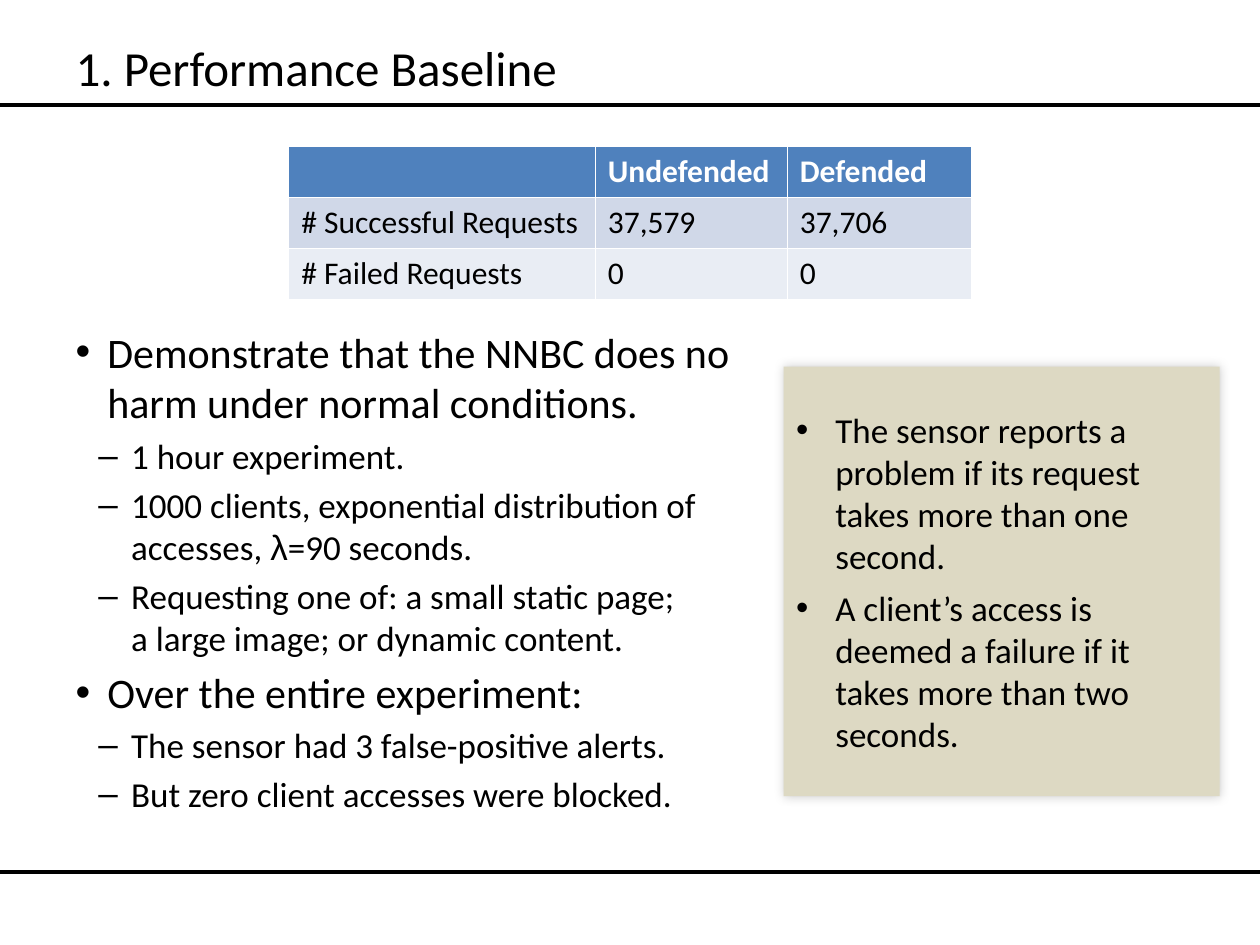
import pptx
import pptx.util
import pptx.dml.color
import pptx.enum.shapes
import pptx.enum.text
import pptx.oxml.ns
from lxml import etree

Cm, Pt = pptx.util.Cm, pptx.util.Pt
qn = pptx.oxml.ns.qn
hues = {"black": "000000", "white": "FFFFFF", "head": "4F81BD",
        "odd": "D0D8E8", "even": "E9EDF4", "note": "DDD9C3"}
rgb = {k: pptx.dml.color.RGBColor.from_string(v) for k, v in hues.items()}


def style(para, size, hue="black", bold=False):
    para.font.name = "Calibri"
    para.font.size = Pt(size)
    para.font.bold = bold
    para.font.color.rgb = rgb[hue]


def bullet(para, mark, left, hang):
    props = para._p.get_or_add_pPr()
    props.set("marL", str(Cm(left)))
    props.set("indent", str(-Cm(hang)))
    etree.SubElement(props, qn("a:buFont")).set("typeface", "Arial")
    etree.SubElement(props, qn("a:buChar")).set("char", mark)


deck = pptx.Presentation()
deck.slide_width, deck.slide_height = Cm(25.4), Cm(19.05)
slide = deck.slides.add_slide(deck.slide_layouts[1])
shapes = slide.shapes

# Rules across the slide
for y in (2.11, 17.58):
    rule = shapes.add_connector(
        pptx.enum.shapes.MSO_CONNECTOR.STRAIGHT, 0, Cm(y), Cm(25.4), Cm(y))
    rule.line.color.rgb = rgb["black"]
    rule.line.width = Pt(2.25)
    etree.SubElement(rule._element.spPr, qn("a:effectLst"))

# Title
title = shapes.title
title.left, title.top, title.width, title.height = (
    Cm(1.27), Cm(0.56), Cm(15.65), Cm(1.57))
frame = title.text_frame
frame.text = "1. Performance Baseline"
frame.auto_size = pptx.enum.text.MSO_AUTO_SIZE.NONE
frame.vertical_anchor = pptx.enum.text.MSO_ANCHOR.MIDDLE
frame.paragraphs[0].alignment = pptx.enum.text.PP_ALIGN.LEFT
style(frame.paragraphs[0], 28)

# Main list: level and text
points = [
    (0, "Demonstrate that the NNBC does no\nharm under normal conditions."),
    (1, "1 hour experiment."),
    (1, "1000 clients, exponential distribution of\naccesses, λ=90 seconds."),
    (1, "Requesting one of: a small static page;\na large image; or dynamic content."),
    (0, "Over the entire experiment:"),
    (1, "The sensor had 3 false-positive alerts."),
    (1, "But zero client accesses were blocked."),
]
looks = [("•", 0.64, 0.64, 24), ("–", 1.12, 0.66, 20)]
body = slide.placeholders[1]
body.left, body.top, body.width, body.height = (
    Cm(1.27), Cm(6.45), Cm(22.86), Cm(10.57))
frame = body.text_frame
frame.auto_size = pptx.enum.text.MSO_AUTO_SIZE.NONE
for i, (level, text) in enumerate(points):
    para = frame.add_paragraph() if i else frame.paragraphs[0]
    mark, left, hang, size = looks[level]
    para.level = level
    start, greek, rest = text.partition("λ")
    para.text = start
    if greek:
        run = para.add_run()
        run.text = greek
        run.font.name = "Arial"
        para.add_run().text = rest
    para.space_before = Pt(size * 0.2 if i else 0)
    bullet(para, mark, left, hang)
    style(para, size)

# Results table
rows = [("", "Undefended", "Defended"),
        ("# Successful Requests", "37,579", "37,706"),
        ("# Failed Requests", "0", "0")]
fills = ["head", "odd", "even"]
table = shapes.add_table(3, 3, Cm(5.82), Cm(2.95), Cm(13.76), Cm(3.09)).table
for col, wide in zip(table.columns, (6.18, 3.87, 3.71)):
    col.width = Cm(wide)
for r, row in enumerate(rows):
    table.rows[r].height = Cm(1.03)
    for c, text in enumerate(row):
        cell = table.cell(r, c)
        cell.text = text
        cell.fill.solid()
        cell.fill.fore_color.rgb = rgb[fills[r]]
        style(cell.text_frame.paragraphs[0], 18,
              "black" if r else "white", r == 0)

# Note box with a soft shadow
note = shapes.add_shape(pptx.enum.shapes.MSO_SHAPE.RECTANGLE,
                        Cm(15.8), Cm(7.39), Cm(8.79), Cm(8.66))
note.fill.solid()
note.fill.fore_color.rgb = rgb["note"]
note.line.fill.background()
note.shadow.inherit = False
glow = etree.SubElement(note._element.spPr.find(qn("a:effectLst")),
                        qn("a:outerShdw"), blurRad=str(Pt(6)), dist="0",
                        dir="18900000", algn="bl", rotWithShape="0")
tint = etree.SubElement(glow, qn("a:srgbClr"), val=hues["black"])
etree.SubElement(tint, qn("a:alpha"), val="20000")
frame = note.text_frame
frame.word_wrap = True
frame.vertical_anchor = pptx.enum.text.MSO_ANCHOR.MIDDLE
facts = ["The sensor reports a problem if its request takes more than one second.",
         "A client’s access is deemed a failure if it takes more than two seconds."]
for i, text in enumerate(facts):
    para = frame.add_paragraph() if i else frame.paragraphs[0]
    para.text = text
    para.alignment = pptx.enum.text.PP_ALIGN.LEFT
    para.space_after = Pt(0 if i else 6)
    bullet(para, "•", 0.79, 0.79)
    style(para, 20)

deck.save("out.pptx")
